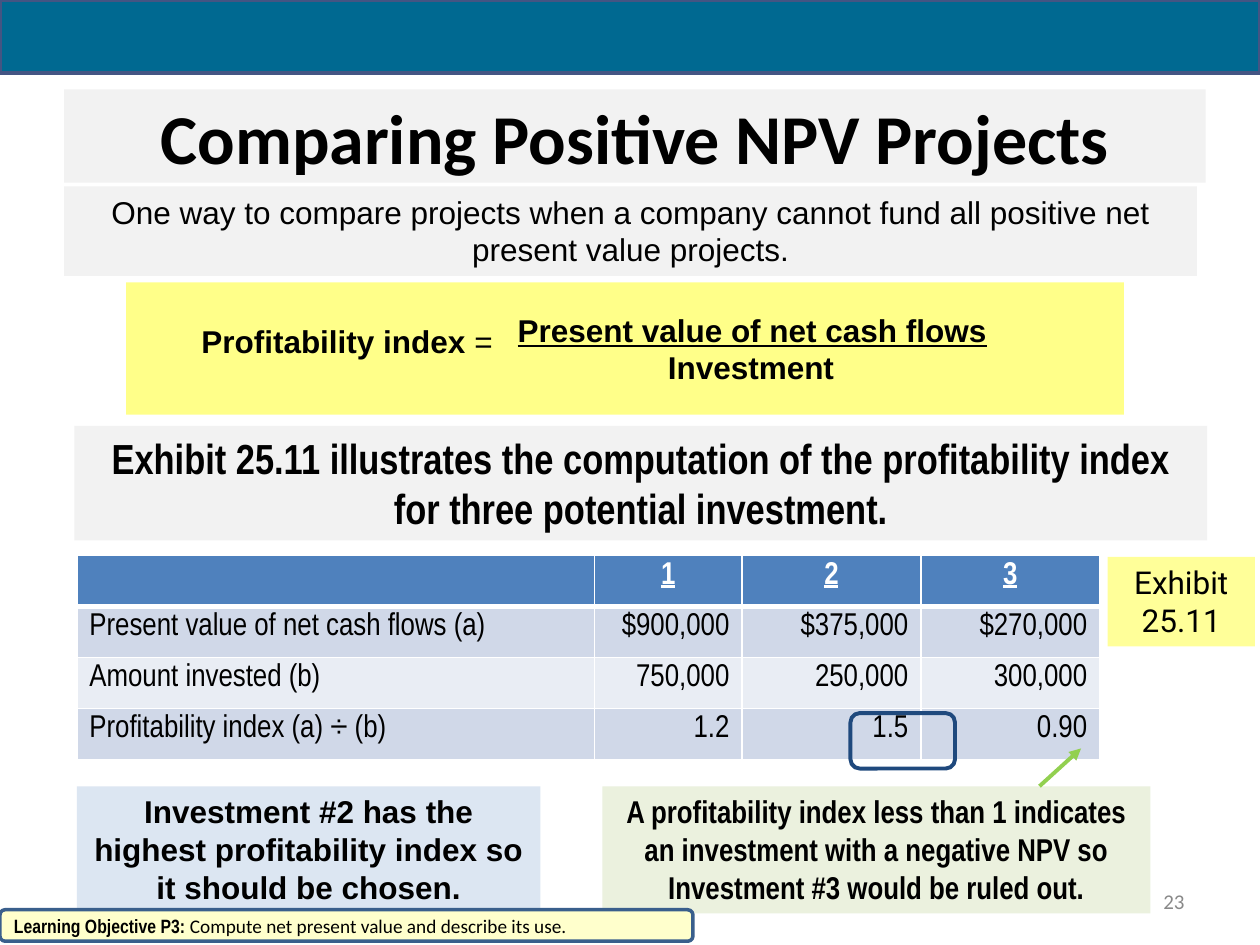
from lxml import etree
from pptx import Presentation
from pptx.dml.color import RGBColor
from pptx.enum import shapes, text
from pptx.oxml import ns
from pptx.util import Inches, Pt

BLACK = RGBColor(0x00, 0x00, 0x00)
WHITE = RGBColor(0xFF, 0xFF, 0xFF)
TEAL = RGBColor(0x00, 0x69, 0x91)
INDIGO = RGBColor(0x44, 0x55, 0x83)
PALE_GRAY = RGBColor(0xF2, 0xF2, 0xF2)
NUMBER_GRAY = RGBColor(0x89, 0x89, 0x89)
FORMULA_YELLOW = RGBColor(0xFF, 0xFF, 0x89)
EXHIBIT_YELLOW = RGBColor(0xFF, 0xFF, 0x99)
CREAM = RGBColor(0xFF, 0xFF, 0xCC)
STEEL = RGBColor(0x3A, 0x5F, 0x8C)
HEADER_BLUE = RGBColor(0x4F, 0x81, 0xBD)
BAND_DARK = RGBColor(0xD0, 0xD8, 0xE8)
BAND_LIGHT = RGBColor(0xE9, 0xED, 0xF4)
PALE_GREEN = RGBColor(0xEB, 0xF1, 0xDE)
PALE_BLUE = RGBColor(0xDC, 0xE6, 0xF2)
NAVY = RGBColor(0x1F, 0x49, 0x7D)
GREEN = RGBColor(0x92, 0xD0, 0x50)

LEFT, CENTER, RIGHT = text.PP_ALIGN.LEFT, text.PP_ALIGN.CENTER, text.PP_ALIGN.RIGHT
TOP, MIDDLE = text.MSO_ANCHOR.TOP, text.MSO_ANCHOR.MIDDLE
RECT = shapes.MSO_SHAPE.RECTANGLE
ROUNDED = shapes.MSO_SHAPE.ROUNDED_RECTANGLE

INVESTMENTS = [
    ("", "1", "2", "3"),
    ("Present value of net cash flows (a)", "$900,000", "$375,000", "$270,000"),
    ("Amount invested (b)", "750,000", "250,000", "300,000"),
    ("Profitability index (a) ÷ (b)", "1.2", "1.5", "0.90"),
]


def add_run(paragraph, words, size=18, font="Arial", color=BLACK, bold=False, underline=False):
    """Append one formatted run to a paragraph."""
    run = paragraph.add_run()
    run.text = words
    run.font.size = Pt(size)
    run.font.name = font
    run.font.bold = bold
    run.font.underline = underline
    run.font.color.rgb = color


def add_panel(slide, box, fill=None, line=None, width=2.25, kind=RECT):
    """Draw a flat preset shape in a box given in inches."""
    panel = slide.shapes.add_shape(kind, *map(Inches, box))
    panel.shadow.inherit = False
    if fill is None:
        panel.fill.background()
    else:
        panel.fill.solid()
        panel.fill.fore_color.rgb = fill
    if line is None:
        panel.line.fill.background()
    else:
        panel.line.color.rgb = line
        panel.line.width = Pt(width)
    return panel


def start_text(holder, align=CENTER, anchor=TOP):
    """Prepare a wrapping text frame and return its first paragraph."""
    frame = holder.text_frame
    frame.word_wrap = True
    frame.vertical_anchor = anchor
    frame.paragraphs[0].alignment = align
    return frame.paragraphs[0]


def add_statement(slide, box, fill, words, anchor=TOP, **style):
    """Draw a filled panel with one centred statement."""
    panel = add_panel(slide, box, fill)
    add_run(start_text(panel, anchor=anchor), words, **style)


def add_label(slide, box, align=CENTER, anchor=TOP):
    """Add a text box and return its first paragraph."""
    label = slide.shapes.add_textbox(*map(Inches, box))
    return start_text(label, align, anchor)


def add_formula(slide, box):
    """Draw the profitability index formula inside its box."""
    left, top = box[:2]
    add_panel(slide, box, FORMULA_YELLOW)
    index = add_label(slide, (left + 0.5, top + 0.27, 2.72, 0.4), LEFT)
    add_run(index, "Profitability index", bold=True)
    add_run(index, " =")
    numerator = add_label(slide, (left + 2.93, top + 0.18, 4.08, 0.4))
    add_run(numerator, "Present value of net cash flows", bold=True, underline=True)
    denominator = add_label(slide, (left + 2.92, top + 0.47, 4.08, 0.4))
    add_run(denominator, "Investment", bold=True)


def set_borders(cell, bottom):
    """Give a cell white borders, with its own bottom width in points."""
    properties = cell._tc.get_or_add_tcPr()
    for place, (side, width) in enumerate((("L", 1), ("R", 1), ("T", 1), ("B", bottom))):
        border = etree.Element(ns.qn(f"a:ln{side}"), w=str(Pt(width)))
        fill = etree.SubElement(border, ns.qn("a:solidFill"))
        etree.SubElement(fill, ns.qn("a:srgbClr"), val=str(WHITE))
        properties.insert(place, border)


def add_investments(slide, box):
    """Build the table that compares the three investments."""
    frame = slide.shapes.add_table(len(INVESTMENTS), len(INVESTMENTS[0]), *map(Inches, box))
    table = frame.table
    for column, width in zip(table.columns, (4.11, 1.17, 1.42, 1.42)):
        column.width = Inches(width)
    for r, values in enumerate(INVESTMENTS):
        header = r == 0
        table.rows[r].height = Inches(box[3] / len(INVESTMENTS))
        for c, value in enumerate(values):
            cell = table.cell(r, c)
            cell.fill.solid()
            cell.fill.fore_color.rgb = HEADER_BLUE if header else BAND_DARK if r % 2 else BAND_LIGHT
            set_borders(cell, 3 if header else 1)
            paragraph = cell.text_frame.paragraphs[0]
            paragraph.alignment = CENTER if header else RIGHT if c else LEFT
            if value:
                add_run(paragraph, value, font="Arial Narrow", color=WHITE if header else BLACK,
                        bold=header, underline=header)


def add_arrow(slide, start, end):
    """Draw the green arrow from the ruling to the index it explains."""
    arrow = slide.shapes.add_connector(shapes.MSO_CONNECTOR.STRAIGHT, *map(Inches, start + end))
    arrow.line.color.rgb = GREEN
    arrow.line.width = Pt(2.25)
    etree.SubElement(arrow.line._get_or_add_ln(), ns.qn("a:tailEnd"), type="triangle")
    etree.SubElement(arrow._element.spPr, ns.qn("a:effectLst"))


def add_conclusions(slide, box):
    """Place the choice, the ruling and the marks that point at the table."""
    left, top, width, height = box
    ruling_width = 4.35
    add_statement(slide, (left + width - ruling_width, top, ruling_width, height), PALE_GREEN,
                  "A profitability index less than 1 indicates an investment with a negative NPV "
                  "so Investment #3 would be ruled out.", font="Arial Narrow", bold=True)
    add_statement(slide, (left, top, 3.68, height), PALE_BLUE,
                  "Investment #2 has the highest profitability index so it should be chosen.",
                  bold=True)
    add_panel(slide, (6.75, top - 0.58, 0.83, 0.44), line=NAVY, kind=ROUNDED)
    add_arrow(slide, (8.25, top), (8.58, top - 0.3))


def add_objective(slide, box):
    """Draw the learning objective strip."""
    strip = add_panel(slide, box, CREAM, STEEL, 2, ROUNDED)
    objective = start_text(strip, LEFT, MIDDLE)
    add_run(objective, "Learning Objective P3: ", 11, "Arial Narrow", bold=True)
    add_run(objective, "Compute net present value and describe its use.", 11, "Calibri")


def main():
    """Build and save the slide."""
    deck = Presentation()
    deck.slide_width, deck.slide_height = Inches(10), Inches(7.5)
    slide = deck.slides.add_slide(deck.slide_layouts[6])
    add_panel(slide, (0, 0, 10, 0.58), TEAL, INDIGO)
    add_statement(slide, (0.51, 0.71, 9.06, 0.74), PALE_GRAY, "Comparing Positive NPV Projects",
                  MIDDLE, size=40, font="Calibri", bold=True)
    number = add_label(slide, (7.17, 6.95, 2.33, 0.4), RIGHT, MIDDLE)
    add_run(number, "23", 12, "Calibri", NUMBER_GRAY)
    add_statement(slide, (0.51, 1.48, 8.99, 0.71), PALE_GRAY,
                  "One way to compare projects when a company cannot fund all positive net "
                  "present value projects.")
    add_formula(slide, (1, 2.24, 7.92, 1.05))
    add_statement(slide, (0.59, 3.38, 8.99, 0.91), PALE_GRAY,
                  "Exhibit 25.11 illustrates the computation of the profitability index "
                  "for three potential investment.", size=24, font="Arial Narrow", bold=True)
    add_investments(slide, (0.61, 4.41, 8.12, 1.62))
    add_conclusions(slide, (0.61, 6.24, 8.52, 1.01))
    add_objective(slide, (0, 7.22, 5.5, 0.25))
    add_statement(slide, (8.79, 4.42, 1.17, 0.71), EXHIBIT_YELLOW, "Exhibit 25.11", font="Roboto")
    deck.save("out.pptx")


if __name__ == "__main__":
    main()
